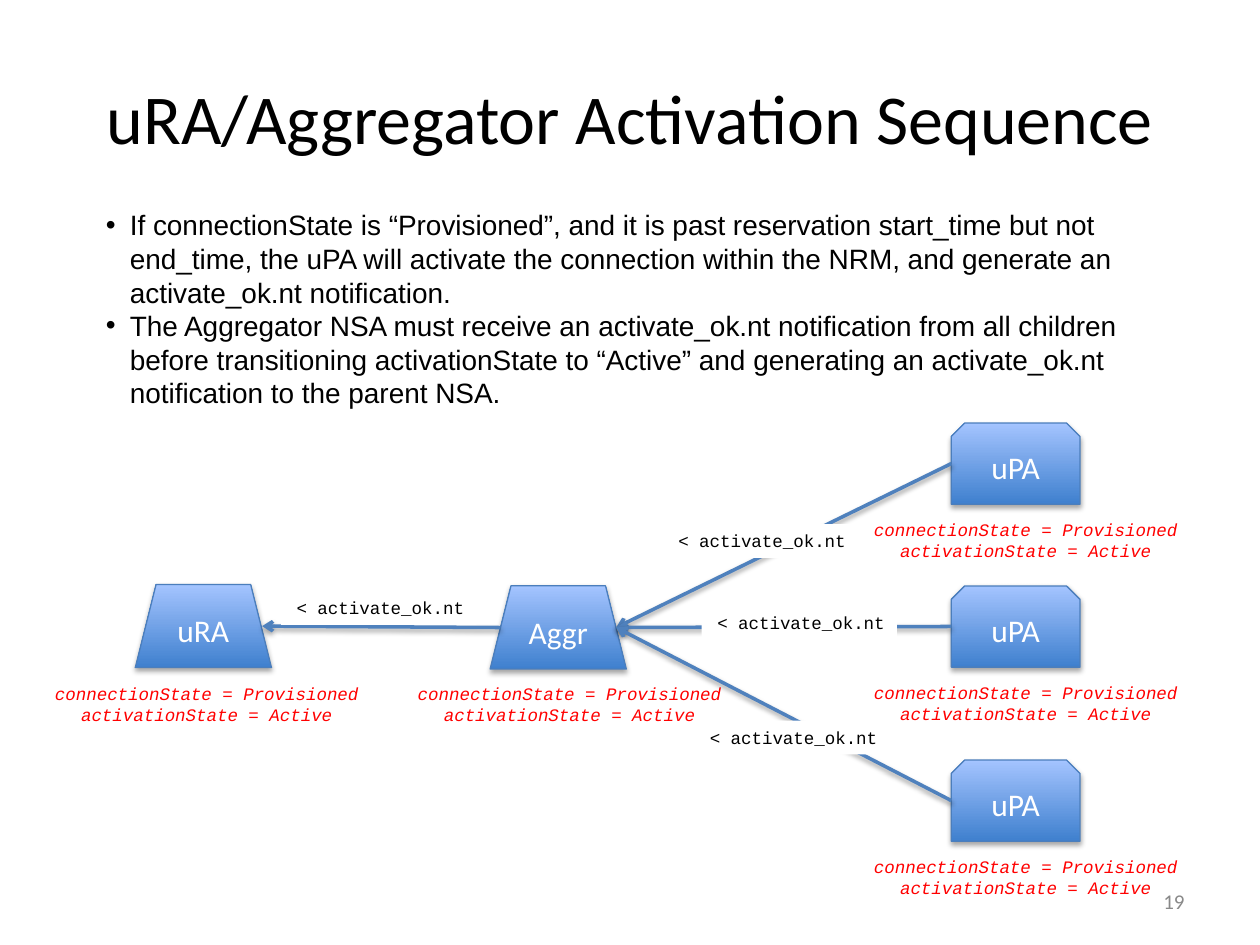
"""Build the activation sequence slide."""
from lxml import etree
from pptx import Presentation, util as u
from pptx.dml.color import RGBColor
from pptx.enum import shapes, text
from pptx.oxml import ns

Pt = u.Pt
HUES = {"black": "000000", "white": "FFFFFF", "red": "FF0000", "grey": "898989",
        "dark": "3F80CE", "light": "A4C4FF", "edge": "4B7EBC", "wire": "4F81BD"}
ALIGN = text.PP_ALIGN
ANCHOR = text.MSO_ANCHOR


def hue(name):
    return RGBColor.from_string(HUES[name])


def node(root, tag, **attrs):
    return etree.SubElement(root, ns.qn("a:" + tag), attrs)


def write(frame, *lines, size=10, font="Courier New", color="black", align=ALIGN.CENTER,
          italic=False, anchor=ANCHOR.TOP, wrap=True):
    frame.word_wrap = wrap
    frame.auto_size = text.MSO_AUTO_SIZE.NONE
    frame.vertical_anchor = anchor
    for i, line in enumerate(lines):
        para = frame.add_paragraph() if i else frame.paragraphs[0]
        para.alignment = align
        para.space_before = Pt(0)
        run = para.add_run()
        run.text = line
        run.font.size = Pt(size)
        run.font.name = font
        run.font.italic = italic
        run.font.color.rgb = hue(color)


class Sheet:
    def __init__(self, slide):
        self.slide = slide

    def place(self, holder, x, y, w, h):
        holder.left, holder.top, holder.width, holder.height = map(Pt, (x, y, w, h))
        return holder.text_frame

    def title(self, line):
        frame = self.place(self.slide.shapes.title, 36, 21.6, 648, 90)
        write(frame, line, size=40, font="Calibri", anchor=ANCHOR.MIDDLE)

    def body(self, *lines):
        frame = self.place(self.slide.placeholders[1], 53.3, 115.2, 601.9, 123.8)
        write(frame, *lines, size=16, font="Arial", align=ALIGN.LEFT)
        for para in frame.paragraphs:
            props = para._p.get_or_add_pPr()
            props.set("marL", str(Pt(13.7)))
            props.set("indent", str(-Pt(13.7)))
            node(props, "buFont", typeface="Arial")
            node(props, "buChar", char="•")

    def shade(self, item, dist, alpha):
        props = item._element.spPr
        for old in props.findall(ns.qn("a:effectLst")):
            props.remove(old)
        glow = node(node(props, "effectLst"), "outerShdw", blurRad=str(Pt(3.1)),
                    dist=str(Pt(dist)), dir="5400000", rotWithShape="0")
        node(node(glow, "srgbClr", val=HUES["black"]), "alpha", val=str(alpha * 1000))

    def agent(self, kind, name, x, y, w, h):
        item = self.slide.shapes.add_shape(kind, Pt(x), Pt(y), Pt(w), Pt(h))
        item.fill.gradient()
        item.fill.gradient_angle = 90
        for stop, tone in zip(item.fill.gradient_stops, ("dark", "light")):
            stop.color.rgb = hue(tone)
        item.line.color.rgb = hue("edge")
        item.line.width = Pt(0.75)
        self.shade(item, 1.8, 35)
        write(item.text_frame, name, size=18, font="Calibri", color="white",
              anchor=ANCHOR.MIDDLE)

    def arrow(self, *ends):
        item = self.slide.shapes.add_connector(shapes.MSO_CONNECTOR.STRAIGHT, *map(Pt, ends))
        item.line.color.rgb = hue("wire")
        item.line.width = Pt(2)
        node(item._element.spPr.find(ns.qn("a:ln")), "tailEnd", type="arrow")
        self.shade(item, 1.6, 38)

    def note(self, x, y, w, h, *lines, fill=None, **style):
        item = self.slide.shapes.add_textbox(Pt(x), Pt(y), Pt(w), Pt(h))
        if fill:
            item.fill.solid()
            item.fill.fore_color.rgb = hue(fill)
        write(item.text_frame, *lines, **style)

    def state(self, x, y):
        self.note(x, y, 194.4, 31.7, "connectionState = Provisioned",
                  "activationState = Active", color="red", italic=True)

    def label(self, x, y):
        self.note(x, y, 111.6, 19.4, "< activate_ok.nt", fill="white",
                  align=ALIGN.RIGHT, wrap=False)


def main():
    deck = Presentation()
    deck.slide_width, deck.slide_height = Pt(720), Pt(540)
    sheet = Sheet(deck.slides.add_slide(deck.slide_layouts[1]))
    sheet.title("uRA/Aggregator Activation Sequence")
    sheet.body(
        "If connectionState is “Provisioned”, and it is past reservation start_time but not "
        "end_time, the uPA will activate the connection within the NRM, and generate an "
        "activate_ok.nt notification.",
        "The Aggregator NSA must receive an activate_ok.nt notification from all children "
        "before transitioning activationState to “Active” and generating an activate_ok.nt "
        "notification to the parent NSA.")

    kinds = shapes.MSO_SHAPE
    for name, x, y, left in (("uRA", 77.3, 334, 20.9), ("Aggr", 280.1, 334.8, 228.2)):
        sheet.agent(kinds.TRAPEZOID, name, x, y, 77.8, 47.5)
        sheet.state(left, 386.6)
    for y in (241.7, 334.8, 434.3):
        sheet.agent(kinds.SNIP_2_SAME_RECTANGLE, "uPA", 543.6, y, 73.6, 46.4)
        sheet.state(488.9, y + 51.6)
        sheet.arrow(543.6, y + 23.2, 352.1, 358.6)
    sheet.arrow(285.8, 358.6, 149.8, 357.8)
    for spot in ((378.7, 299.5), (401, 346.3), (396.7, 411.8), (160.6, 337.7)):
        sheet.label(*spot)
    sheet.note(516.2, 500.4, 167.8, 28.8, "19", size=12, font="Calibri", color="grey",
               align=ALIGN.RIGHT, anchor=ANCHOR.MIDDLE)
    deck.save("out.pptx")


if __name__ == "__main__":
    main()
